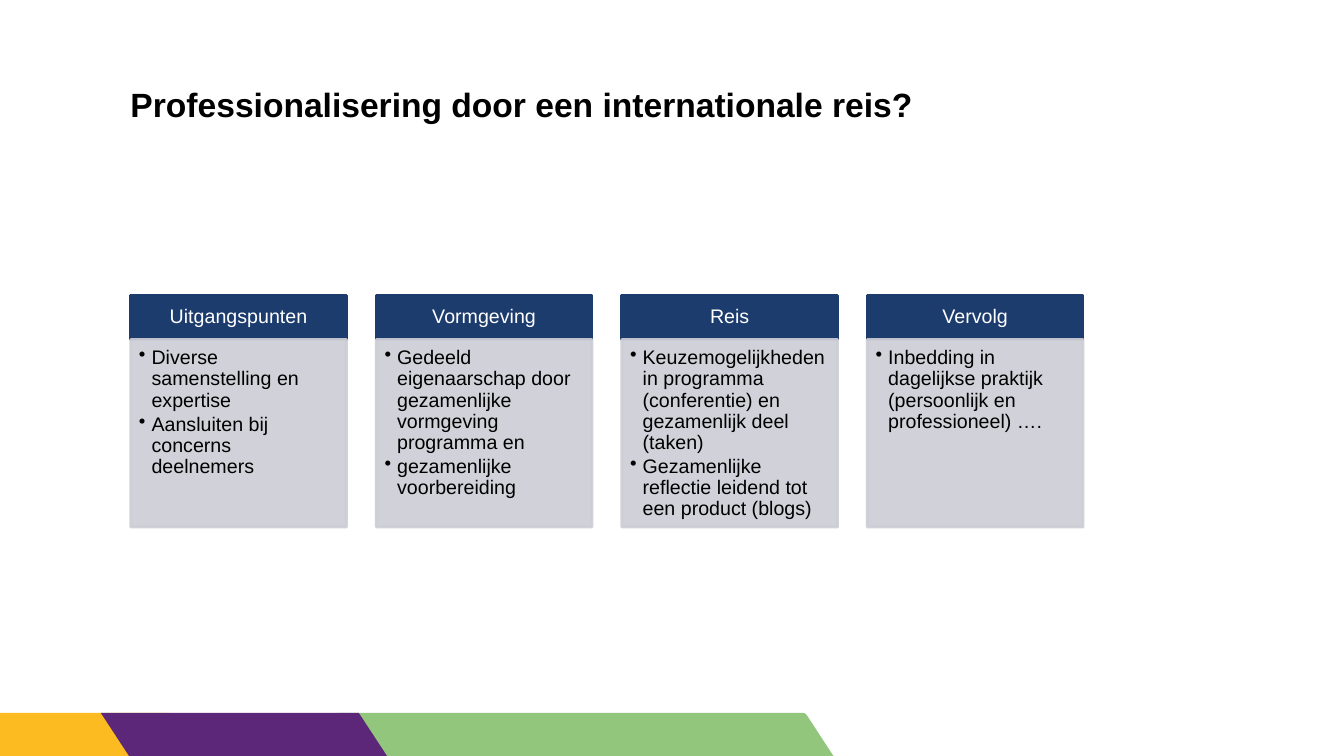
import pptx
import pptx.util
import pptx.dml.color
import pptx.enum.shapes
import pptx.enum.text
import pptx.oxml
import pptx.oxml.ns

Pt = pptx.util.Pt
Align = pptx.enum.text.PP_ALIGN
Anchor = pptx.enum.text.MSO_ANCHOR

HUES = {
    "navy": "1D3C6E", "grey": "CDCED5", "gold": "FBBB21", "purple": "5C2779",
    "green": "91C67C", "black": "000000", "white": "FFFFFF",
}


class Deck:
    """Holds the style and the current slide."""
    face = "Arial"

    def __init__(self):
        self.prs = pptx.Presentation()
        self.prs.slide_width, self.prs.slide_height = Pt(960), Pt(540)
        self.slide = self.prs.slides.add_slide(self.prs.slide_layouts[5])

    def color(self, name):
        return pptx.dml.color.RGBColor.from_string(HUES[name])

    def font(self, para, size, hue, bold=False):
        font = para.font
        font.name, font.size, font.bold = self.face, Pt(size), bold
        font.color.rgb = self.color(hue)

    def frame(self, shape, inset, anchor):
        frame = shape.text_frame
        frame.word_wrap = True
        frame.auto_size = pptx.enum.text.MSO_AUTO_SIZE.NONE
        frame.vertical_anchor = anchor
        (frame.margin_left, frame.margin_top,
         frame.margin_right, frame.margin_bottom) = map(Pt, inset)
        return frame

    def title(self, text, left, top, width, height):
        shape = self.slide.shapes.title
        shape.left, shape.top = Pt(left), Pt(top)
        shape.width, shape.height = Pt(width), Pt(height)
        frame = self.frame(shape, (0, 0, 0, 0), Anchor.TOP)
        frame.text = text
        para = frame.paragraphs[0]
        para.alignment = Align.LEFT
        self.font(para, 24, "black", True)

    def band(self, hue, points):
        start, *rest = [(Pt(x), Pt(y)) for x, y in points]
        pen = self.slide.shapes.build_freeform(*start)
        pen.add_line_segments(rest, close=True)
        shape = pen.convert_to_shape()
        shape.shadow.inherit = False
        shape.fill.solid()
        shape.fill.fore_color.rgb = self.color(hue)
        shape.line.fill.background()

    def box(self, hue, left, top, width, height, opaque=100):
        shape = self.slide.shapes.add_shape(
            pptx.enum.shapes.MSO_SHAPE.RECTANGLE,
            Pt(left), Pt(top), Pt(width), Pt(height))
        shape.shadow.inherit = False
        shape.line.width = Pt(2)
        for fill in (shape.fill, shape.line.fill):
            fill.solid()
            fill.fore_color.rgb = self.color(hue)
        if opaque < 100:
            for node in shape._element.spPr.iter(pptx.oxml.ns.qn("a:srgbClr")):
                node.append(pptx.oxml.parse_xml(
                    f'<a:alpha {pptx.oxml.ns.nsdecls("a")} val="{opaque * 1000}"/>'))
        return shape

    def head(self, text, *area):
        frame = self.frame(self.box("navy", *area), (7.84, 4.48, 7.84, 4.48),
                           Anchor.MIDDLE)
        frame.text = text
        para = frame.paragraphs[0]
        para.alignment, para.line_spacing = Align.CENTER, 0.9
        self.font(para, 14, "white")

    def body(self, items, *area):
        frame = self.frame(self.box("grey", *area, opaque=90),
                           (5.88, 5.88, 7.84, 8.82), Anchor.TOP)
        frame.text = "\n".join(items)
        for para in frame.paragraphs:
            para.alignment, para.line_spacing = Align.LEFT, 0.9
            para.level, para.space_after = 1, Pt(2.1)
            props = para._p.get_or_add_pPr()
            props.set("marL", str(Pt(9)))
            props.set("indent", str(-Pt(9)))
            props.append(pptx.oxml.parse_xml(
                f'<a:buChar {pptx.oxml.ns.nsdecls("a")} char="•"/>'))
            self.font(para, 14, "black")


STEPS = [
    ("Uitgangspunten", ["Diverse samenstelling en expertise",
                        "Aansluiten bij concerns deelnemers"]),
    ("Vormgeving", ["Gedeeld eigenaarschap door gezamenlijke vormgeving programma en",
                    "gezamenlijke voorbereiding"]),
    ("Reis", ["Keuzemogelijkheden in programma (conferentie) en gezamenlijk deel (taken)",
              "Gezamenlijke reflectie leidend tot een product (blogs)"]),
    ("Vervolg", ["Inbedding in dagelijkse praktijk (persoonlijk en professioneel) ….",]),
]


def main():
    deck = Deck()

    # Coloured bands along the foot
    top, foot = 509.2, 540
    deck.band("green", [(241, top), (573.5, top), (575, 509.6), (576.3, 510.8),
                        (595.3, foot), (261, foot)])
    deck.band("gold", [(0, top), (121, top), (141, foot), (0, foot)])
    deck.band("purple", [(72, top), (256.3, top), (276.5, foot), (92.2, foot)])

    # Title
    deck.title("Professionalisering door een internationale reis?",
               93.2, 59.8, 680.4, 33)

    # Four columns, each a heading over a list
    left, pitch, width = 93.4, 175.4, 154.1
    for col, (name, items) in enumerate(STEPS):
        x = left + col * pitch
        deck.head(name, x, 211, width, 31.5)
        deck.body(items, x, 242.5, width, 134)

    deck.prs.save("out.pptx")


if __name__ == "__main__":
    main()
